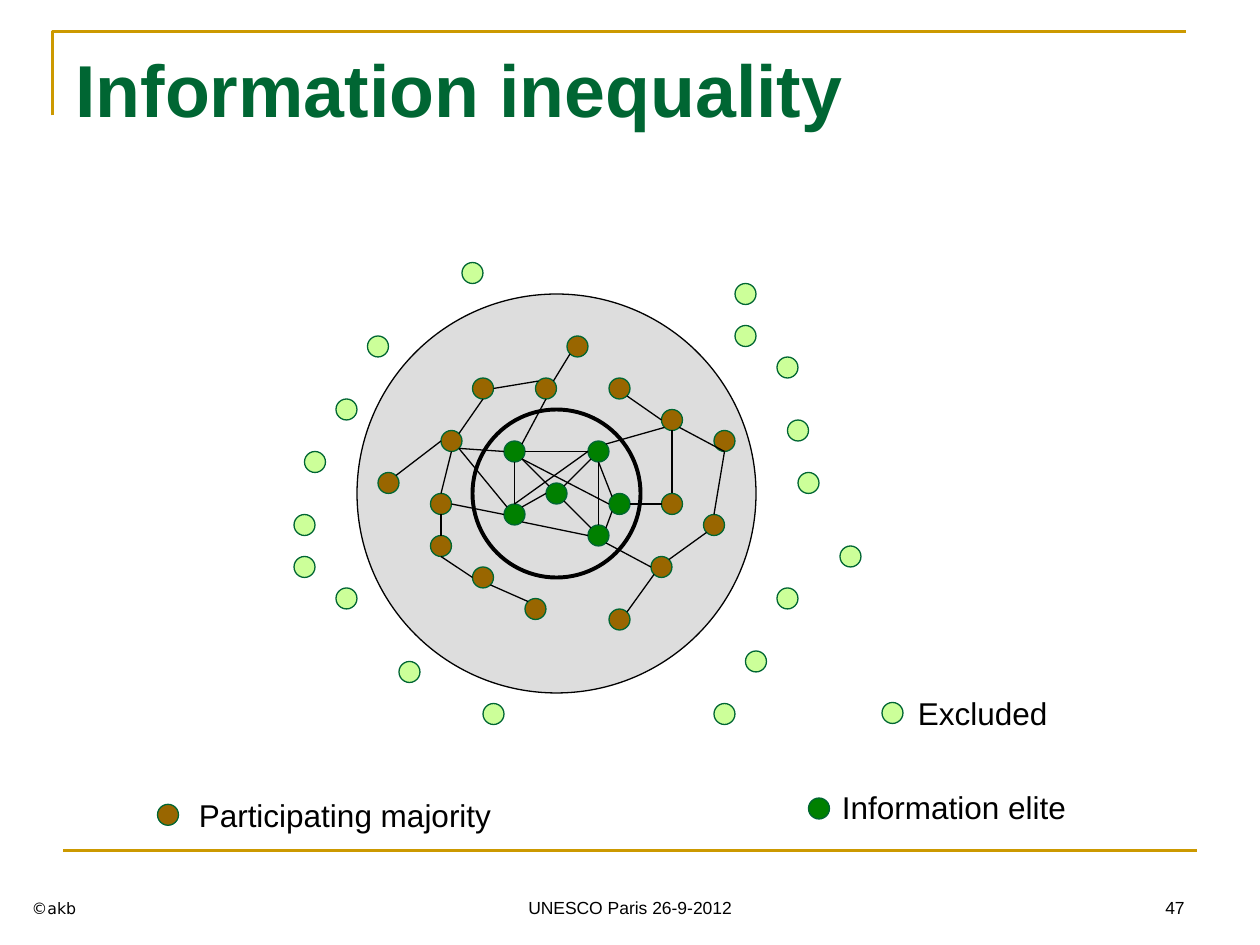
import math
import pptx
import pptx.util
import pptx.dml.color
import pptx.enum.shapes
import pptx.enum.text
import pptx.oxml.ns
import lxml.etree

Pt = pptx.util.Pt
RGBColor = pptx.dml.color.RGBColor
ALIGN = pptx.enum.text.PP_ALIGN
ANCHOR = pptx.enum.text.MSO_ANCHOR
OVAL = pptx.enum.shapes.MSO_SHAPE.OVAL
STRAIGHT = pptx.enum.shapes.MSO_CONNECTOR.STRAIGHT

BLACK = RGBColor(0x00, 0x00, 0x00)
GOLD = RGBColor(0xCC, 0x99, 0x00)
DARK_GREEN = RGBColor(0x00, 0x66, 0x33)
GREY = RGBColor(0xDD, 0xDD, 0xDD)
BROWN = RGBColor(0x99, 0x66, 0x00)
GREEN = RGBColor(0x00, 0x80, 0x00)
LIME = RGBColor(0xCC, 0xFF, 0x99)

UNIT = 6      # grid step of the diagram; a dot's radius is one step
CENTRE = (53, 47)

# People: centres in grid steps
MAJORITY = {
    "m1": (43, 42), "m2": (37, 46), "m3": (42, 52), "m4": (42, 48),
    "m5": (46, 55), "m6": (51, 58), "m7": (59, 59), "m8": (63, 54),
    "m9": (64, 48), "m10": (64, 40), "m11": (59, 37), "m12": (55, 33),
    "m13": (46, 37), "m14": (52, 37), "m15": (68, 50), "m16": (69, 42),
}
ELITE = {
    "e1": CENTRE, "e2": (57, 51), "e3": (49, 43),
    "e4": (57, 43), "e5": (49, 49), "e6": (59, 48),
}
EXCLUDED = [
    (30, 44), (47, 68), (29, 54), (29, 50), (33, 57), (39, 64),
    (33, 39), (36, 33), (71, 32), (71, 28), (75, 35), (76, 41),
    (77, 46), (81, 53), (69, 68), (72, 63), (75, 57), (45, 26),
]

# Links: person and side of the dot, at each end
LINKS = [
    "m2 NE m1 W", "m13 E m14 NW", "m13 S m1 NE", "m14 NE m12 SW",
    "m11 SE m10 W", "m10 S m9 N", "m7 NE m8 SW", "m1 S m4 N",
    "m4 S m3 N", "m3 S m5 W", "m5 SE m6 NW", "m15 N m16 S",
    "m10 SE m16 S", "m15 SW m8 NE",
    "e1 NW e3 SE", "e6 NW e4 S", "e4 S e2 N", "e3 E e4 W",
    "e3 S e5 N", "e5 NE e1 W", "e1 NE e4 SW", "e1 SE e2 NW",
    "e5 SE e2 W", "e2 NE e6 SW", "e3 SE e6 W", "e5 N e4 W",
    "m4 E e5 W", "m1 SE e3 W", "e3 NE m14 S", "e4 NE m10 SW",
    "e6 E m9 W", "m8 W e2 SE", "e5 NW m1 SE",
]
SIDES = ["E", "SE", "S", "SW", "W", "NW", "N", "NE"]  # clockwise, 45° apart

# Legend: dot centre in grid steps, colour, label, label box in points
LEGEND = [
    ((16, 77.6), BROWN, "Participating majority", (106.5, 451.5, 181.5, 29)),
    ((78, 77), GREEN, "Information elite", (474, 447, 142.5, 29)),
    ((85, 67.9), LIME, "Excluded", (517.5, 393, 88.5, 29)),
]

# Footer: text, box, alignment, font, size
FOOTER = [
    ("©akb", (11, 492, 168, 36), ALIGN.LEFT, "DejaVu Sans", 9),
    ("UNESCO Paris 26-9-2012", (246, 492, 228, 36), ALIGN.CENTER, "Arial", 10),
    ("47", (516, 492, 168, 36), ALIGN.RIGHT, "Arial", 10),
]

prs = pptx.Presentation()
prs.slide_width, prs.slide_height = Pt(720), Pt(540)
slide = prs.slides.add_slide(prs.slide_layouts[6])
shapes = slide.shapes


def add_text(text, box, size, font="Arial", color=BLACK, bold=False,
             align=ALIGN.LEFT, anchor=ANCHOR.TOP, wrap=True):
    tf = shapes.add_textbox(*map(Pt, box)).text_frame
    tf.word_wrap = wrap
    tf.vertical_anchor = anchor
    p = tf.paragraphs[0]
    p.text = text
    p.alignment = align
    r = p.runs[0]
    r.font.size, r.font.name, r.font.bold = Pt(size), font, bold
    r.font.color.rgb = color


def add_circle(centre, radius, fill, line, width=0.75):
    x, y = centre
    sp = shapes.add_shape(OVAL, Pt((x - radius) * UNIT), Pt((y - radius) * UNIT),
                          Pt(2 * radius * UNIT), Pt(2 * radius * UNIT))
    sp.shadow.inherit = False
    if fill is None:
        sp.fill.background()
    else:
        sp.fill.solid()
        sp.fill.fore_color.rgb = fill
    sp.line.color.rgb = line
    sp.line.width = Pt(width)


def add_dot(centre, fill):
    add_circle(centre, 1, fill, DARK_GREEN)


def add_line(start, end, color, width):
    cxn = shapes.add_connector(STRAIGHT, *map(Pt, (*start, *end)))
    cxn.line.color.rgb = color
    cxn.line.width = Pt(width)
    lxml.etree.SubElement(cxn._element.spPr, pptx.oxml.ns.qn("a:effectLst"))


def dot_edge(person, side):
    x, y = PEOPLE[person]
    angle = math.radians(45 * SIDES.index(side))
    return (x + math.cos(angle)) * UNIT, (y + math.sin(angle)) * UNIT


# Frame rules and title
builder = shapes.build_freeform(Pt(30), Pt(66))
builder.add_line_segments([(Pt(30), Pt(18)), (Pt(678), Pt(18))], close=False)
corner = builder.convert_to_shape()
corner.shadow.inherit = False
corner.fill.background()
corner.line.color.rgb = GOLD
corner.line.width = Pt(1.5)
add_line((36, 486), (684, 486), GOLD, 1.5)
add_text("Information inequality", (36, 21.6, 648, 90), 42,
         color=DARK_GREEN, bold=True)

# Network: outer disc, inner ring, dots, links
PEOPLE = {**MAJORITY, **ELITE}
add_circle(CENTRE, 19, GREY, BLACK)
add_circle(CENTRE, 8, None, BLACK, 2.25)
for centres, color in ((MAJORITY.values(), BROWN), (ELITE.values(), GREEN),
                       (EXCLUDED, LIME)):
    for centre in centres:
        add_dot(centre, color)
for link in LINKS:
    a, side_a, b, side_b = link.split()
    add_line(dot_edge(a, side_a), dot_edge(b, side_b), BLACK, 0.75)

# Legend
for centre, color, label, box in LEGEND:
    add_dot(centre, color)
    add_text(label, box, 18, wrap=False)

# Footer
for text, box, align, font, size in FOOTER:
    add_text(text, box, size, font, align=align, anchor=ANCHOR.BOTTOM)

prs.save("out.pptx")
